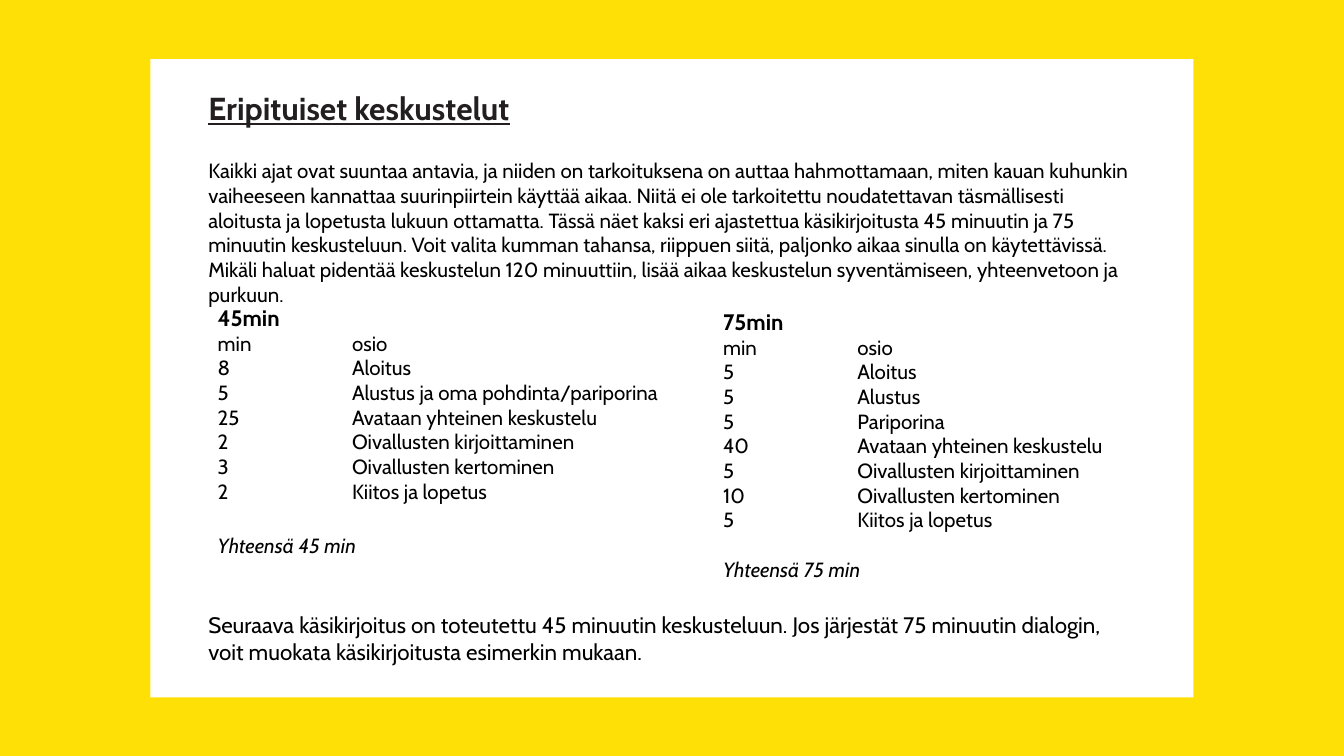
"""Builds a slide comparing the timetables of 45 and 75 minute discussions."""
from lxml.etree import SubElement
from pptx import Presentation
from pptx.dml.color import RGBColor
from pptx.enum.shapes import MSO_SHAPE as Shape
from pptx.oxml.ns import qn
from pptx.util import Inches, Pt

YELLOW = RGBColor(0xFF, 0xE0, 0x06)
WHITE = RGBColor(0xFF, 0xFF, 0xFF)
BLACK = RGBColor(0, 0, 0)
CHARCOAL = RGBColor(0x23, 0x1F, 0x20)

INTRO = (
    "Kaikki ajat ovat suuntaa antavia, ja niiden on tarkoituksena on auttaa "
    "hahmottamaan, miten kauan kuhunkin vaiheeseen kannattaa suurinpiirtein "
    "käyttää aikaa. Niitä ei ole tarkoitettu noudatettavan täsmällisesti "
    "aloitusta ja lopetusta lukuun ottamatta. Tässä näet kaksi eri ajastettua "
    "käsikirjoitusta 45 minuutin ja 75 minuutin keskusteluun. Voit valita "
    "kumman tahansa, riippuen siitä, paljonko aikaa sinulla on käytettävissä. "
    "Mikäli haluat pidentää keskustelun 120 minuuttiin, lisää aikaa "
    "keskustelun syventämiseen, yhteenvetoon ja purkuun."
)
CLOSING = (
    "Seuraava käsikirjoitus on toteutettu 45 minuutin keskusteluun. Jos "
    "järjestät 75 minuutin dialogin, voit muokata käsikirjoitusta esimerkin mukaan."
)
SCHEDULE_75 = (75, (5.22, 2.21, 3.24, 4.71), 13.2, [
    (5, "Aloitus"),
    (5, "Alustus"),
    (5, "Pariporina"),
    (40, "Avataan yhteinen keskustelu"),
    (5, "Oivallusten kirjoittaminen"),
    (10, "Oivallusten kertominen"),
    (5, "Kiitos ja lopetus"),
])
SCHEDULE_45 = (45, (1.46, 2.18, 4.87, 4.71), 15.8, [
    (8, "Aloitus"),
    (5, "Alustus ja oma pohdinta/pariporina"),
    (25, "Avataan yhteinen keskustelu"),
    (2, "Oivallusten kirjoittaminen"),
    (3, "Oivallusten kertominen"),
    (2, "Kiitos ja lopetus"),
])


def add_text(box, lines, size):
    frame = slide.shapes.add_textbox(*map(Inches, box)).text_frame
    frame.word_wrap = True
    frame.margin_left = frame.margin_right = Inches(0.16)
    frame.margin_top = frame.margin_bottom = Inches(0.08)
    frame.text = "\n".join(lines)
    for paragraph in frame.paragraphs:
        font = paragraph.runs[0].font
        font.name = "Cabin"
        font.size = Pt(size)
        font.color.rgb = BLACK
    return frame.paragraphs


prs = Presentation()
prs.slide_width = Inches(10)
prs.slide_height = prs.slide_width * 9 // 16
slide = prs.slides.add_slide(prs.slide_layouts[6])

backdrop = (0, 0, 10, prs.slide_height.inches)
for box, color in [(backdrop, YELLOW), ((1.12, 0.44, 7.76, 4.75), WHITE)]:
    panel = slide.shapes.add_shape(Shape.RECTANGLE, *map(Inches, box))
    panel.shadow.inherit = False
    panel.fill.solid()
    panel.fill.fore_color.rgb = color
    panel.line.fill.background()

title, intro = add_text(
    (1.39, 0.54, 7.23, 1.81), ["Eripituiset keskustelut", INTRO], 11
)
title.line_spacing = 1.15
intro.space_before = Pt(16.8)
title_font = title.runs[0].font
title_font.size = Pt(17)
title_font.bold = title_font.underline = True
title_font.color.rgb = CHARCOAL

for minutes, box, total_gap, sections in [SCHEDULE_75, SCHEDULE_45]:
    rows = [f"{duration}\t{section}" for duration, section in sections]
    heading, *timetable, total = add_text(
        box, [f"{minutes}min", "min\tosio", *rows, f"Yhteensä {minutes} min"], 11
    )
    heading.runs[0].font.size = Pt(12)
    heading.runs[0].font.bold = True
    for row in timetable:
        tab_stops = SubElement(row._p.get_or_add_pPr(), qn("a:tabLst"))
        SubElement(tab_stops, qn("a:tab"), pos=str(Inches(1)), algn="l")
    total.runs[0].font.italic = True
    total.space_before = Pt(total_gap)

add_text((1.39, 4.47, 7.23, 4.71), [CLOSING], 12)

prs.save("out.pptx")
